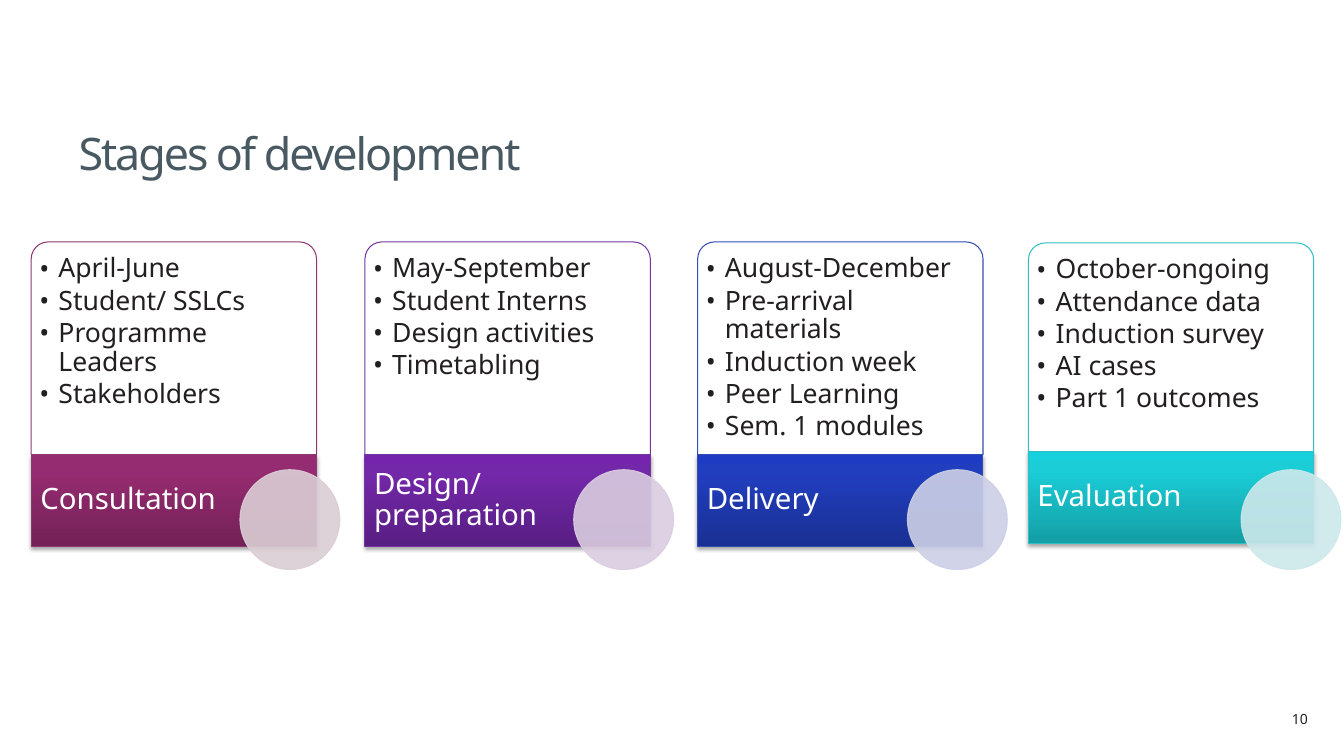
from copy import deepcopy
from dataclasses import dataclass

from pptx import Presentation
from pptx.dml.color import RGBColor
from pptx.enum.shapes import MSO_SHAPE
from pptx.enum.text import MSO_ANCHOR, MSO_AUTO_SIZE, PP_ALIGN
from pptx.oxml.ns import qn
from pptx.util import Inches, Pt
from lxml.etree import SubElement


@dataclass(frozen=True)
class Theme:
    font: str = "Noto Sans"
    title: tuple = (32, "495961")
    item: tuple = (19, "231F20")
    label: tuple = (21, "FFFFFF")
    number: tuple = (10, "231F20")
    card: str = "FFFFFF"
    shadow: str = "000000"
    outline: float = 0.75


THEME = Theme()

# nudge: shift of the card sideways, of the card down, of the bar down
STAGES = [
    {"label": "Consultation", "line": "8D3970", "circle": "DBCED5", "nudge": (0, 0, 0),
     "gradient": ("732156", "952B70", "982971"),
     "items": ["April-June", "Student/ SSLCs", "Programme Leaders", "Stakeholders"]},
    {"label": "Design/ preparation", "line": "74379F", "circle": "DACDE0", "nudge": (0, 0, 0),
     "gradient": ("581E83", "7327A9", "7424AD"),
     "items": ["May-September", "Student Interns", "Design activities", "Timetabling"]},
    {"label": "Delivery", "line": "354CB3", "circle": "CDD0E6", "nudge": (-0.01, 0, 0),
     "gradient": ("193093", "213EBF", "1E3CC3"),
     "items": ["August-December", "Pre-arrival materials", "Induction week",
               "Peer Learning", "Sem. 1 modules"]},
    {"label": "Evaluation", "line": "31BFC7", "circle": "CDE8EB", "nudge": (-0.04, 0.01, -0.03),
     "gradient": ("149EA5", "1ACDD7", "16D1DB"),
     "items": ["October-ongoing", "Attendance data", "Induction survey",
               "AI cases", "Part 1 outcomes"]},
]
PITCH = 3.31


def write_text(box, lines, style, insets, anchor, **paragraph_format):
    """Fill the box with one paragraph per line and return the paragraphs."""
    frame = box.text_frame
    left, top, right, bottom = (Inches(inset) for inset in insets)
    frame_format = {"word_wrap": True, "auto_size": MSO_AUTO_SIZE.NONE,
                    "vertical_anchor": anchor, "margin_left": left, "margin_top": top,
                    "margin_right": right, "margin_bottom": bottom}
    for name, value in frame_format.items():
        setattr(frame, name, value)
    frame.text = "\n".join(lines)
    size, color = style
    for para in frame.paragraphs:
        for name, value in {"space_before": Pt(0), **paragraph_format}.items():
            setattr(para, name, value)
        span = para.runs[0]
        for name, value in {"name": THEME.font, "size": Pt(size), "bold": False}.items():
            setattr(span.font, name, value)
        span.font.color.rgb = RGBColor.from_string(color)
    return frame.paragraphs


def make_translucent(shape):
    """Set every colour the shape has so far to 90% opacity."""
    for color in shape._element.spPr.iter(qn("a:srgbClr")):
        SubElement(color, qn("a:alpha"), val="90000")


deck = Presentation()
deck.slide_width, deck.slide_height = Inches(13.33), Inches(7.5)
# The Comparison layout has a title and four body placeholders
slide = deck.slides.add_slide(deck.slide_layouts[4])
shapes = slide.shapes

title, *list_boxes = slide.placeholders
title.left, title.top = Inches(0.68), Inches(0.76)
title.width, title.height = Inches(11.86), Inches(1.02)
heading = write_text(title, ["Stages of development"], THEME.title, (0.1, 0.05, 0.1, 0),
                     MSO_ANCHOR.BOTTOM, alignment=PP_ALIGN.LEFT)[0]
heading.runs[0].font._element.set("spc", "-150")

for index, (stage, list_box) in enumerate(zip(STAGES, list_boxes)):
    shift, card_drop, bar_drop = stage["nudge"]
    left = 0.31 + PITCH * index + shift
    top = 2.4 + card_drop
    line_color = RGBColor.from_string(stage["line"])

    card = shapes.add_shape(MSO_SHAPE.ROUND_2_SAME_RECTANGLE, Inches(left), Inches(top),
                            Inches(2.83), Inches(2.11))
    card.adjustments[0], card.adjustments[1] = 0.08, 0
    card.fill.solid()
    card.fill.fore_color.rgb = RGBColor.from_string(THEME.card)
    make_translucent(card)

    # Bring the list in front of its card
    shapes._spTree.append(list_box._element)
    list_box.left, list_box.top = Inches(left + 0.05), Inches(top + 0.05)
    list_box.width, list_box.height = Inches(2.73), Inches(2.06)
    items = write_text(list_box, stage["items"], THEME.item, (0.03, 0.08, 0.03, 0.03),
                       MSO_ANCHOR.TOP, level=1, alignment=PP_ALIGN.LEFT,
                       line_spacing=0.9, space_after=Pt(2.5))
    for para in items:
        properties = para._p.get_or_add_pPr()
        properties.set("marL", str(Inches(0.19)))
        properties.set("indent", str(-Inches(0.19)))
        SubElement(properties, qn("a:buFont"), typeface=THEME.font)
        SubElement(properties, qn("a:buChar"), char="•")

    bar = shapes.add_shape(MSO_SHAPE.RECTANGLE, Inches(left), Inches(4.51 + bar_drop),
                           Inches(2.83), Inches(0.91))
    bar.fill.gradient()
    bar.fill.gradient_angle = 90
    stop_list = bar._element.spPr.find(".//" + qn("a:gsLst"))
    stop_list.append(deepcopy(stop_list[-1]))
    for stop, position, color in zip(bar.fill.gradient_stops, (0, 0.8, 1), stage["gradient"]):
        stop.position = position
        stop.color.rgb = RGBColor.from_string(color)
    write_text(bar, [stage["label"]], THEME.label, (0.09, 0, 0.87, 0),
               MSO_ANCHOR.MIDDLE, alignment=PP_ALIGN.LEFT, line_spacing=0.9)

    circle = shapes.add_shape(MSO_SHAPE.OVAL, Inches(2.38 + PITCH * index), Inches(4.66),
                              Inches(0.99), Inches(0.99))
    circle_color = RGBColor.from_string(stage["circle"])
    circle.fill.solid()
    circle.fill.fore_color.rgb = circle_color

    for shape, color in ((card, line_color), (bar, line_color), (circle, circle_color)):
        shape.line.color.rgb = color
        shape.line.width = Pt(THEME.outline)
        shape.shadow.inherit = False
    make_translucent(circle)

    effects = bar._element.spPr.find(qn("a:effectLst"))
    shadow = SubElement(effects, qn("a:outerShdw"), blurRad=str(Pt(3.1)), dist=str(Pt(1.8)),
                        dir="5400000", rotWithShape="0")
    shadow_color = SubElement(shadow, qn("a:srgbClr"), val=THEME.shadow)
    SubElement(shadow_color, qn("a:alpha"), val="35000")

number_box = shapes.add_textbox(Inches(12.02), Inches(7), Inches(1.05), Inches(0.27))
write_text(number_box, ["10"], THEME.number, (0.1, 0.05, 0.1, 0.05),
           MSO_ANCHOR.TOP, alignment=PP_ALIGN.RIGHT)

deck.save("out.pptx")
